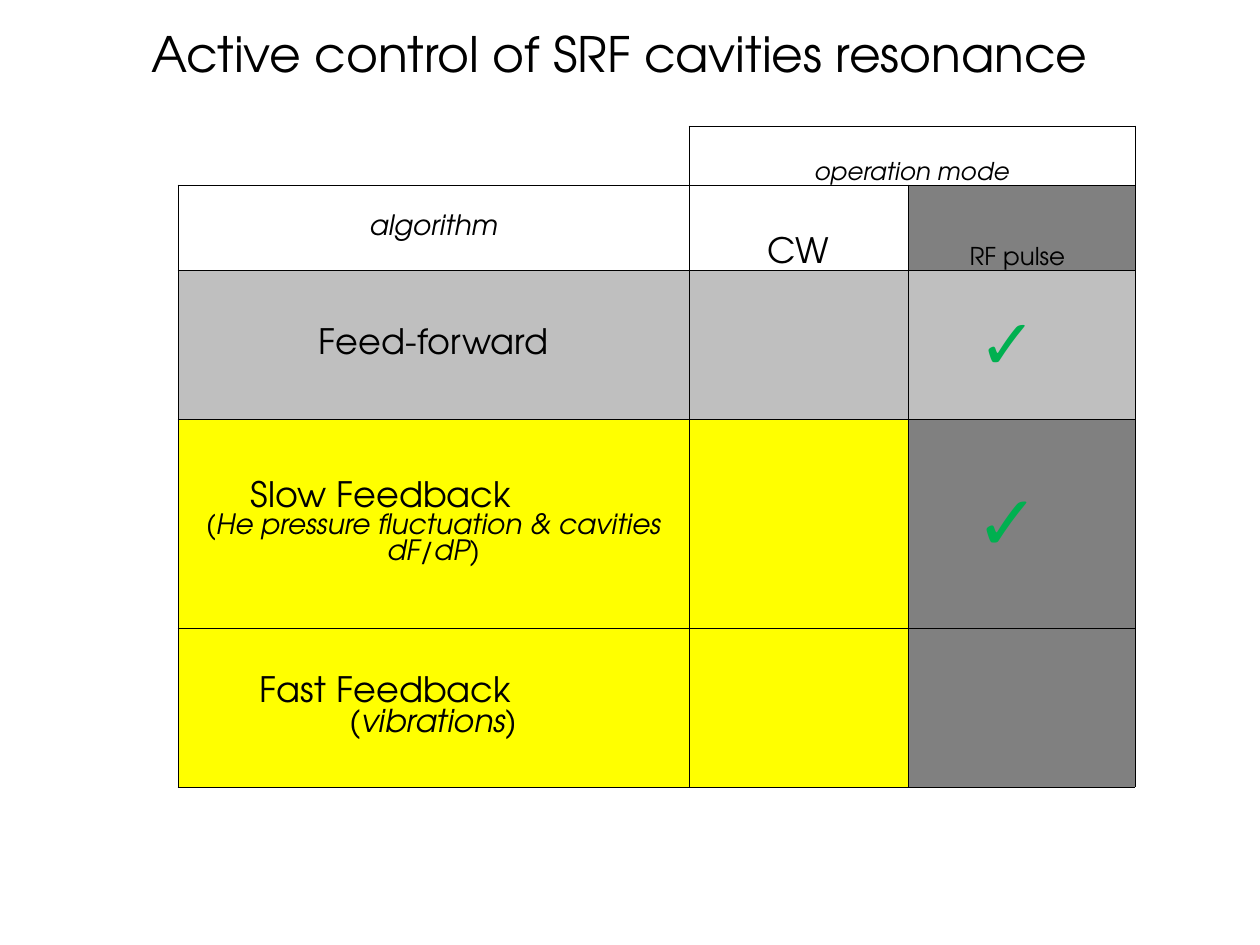
from dataclasses import dataclass

from lxml import etree
from pptx import Presentation
from pptx.dml.color import RGBColor
from pptx.enum.text import MSO_ANCHOR, MSO_AUTO_SIZE, PP_ALIGN
from pptx.oxml.ns import qn
from pptx.util import Pt

BLACK = RGBColor(0x00, 0x00, 0x00)
DARK_GRAY = RGBColor(0x80, 0x80, 0x80)
LIGHT_GRAY = RGBColor(0xBF, 0xBF, 0xBF)
YELLOW = RGBColor(0xFF, 0xFF, 0x00)
GREEN = RGBColor(0x00, 0xB0, 0x50)

MIDDLE = MSO_ANCHOR.MIDDLE
BOTTOM = MSO_ANCHOR.BOTTOM
CENTER = PP_ALIGN.CENTER
LEFT = PP_ALIGN.LEFT
NO_AUTOFIT = MSO_AUTO_SIZE.NONE

FONT = "TeX Gyre Adventor"
CHECK_FONT = "DejaVu Sans"
NO_STYLE = "{2D5ABB26-0587-4C30-8999-92F81FD0307C}"
TITLE_ONLY = 5
ALL_SIDES = "LRTB"

TABLE_LEFT, TABLE_TOP = 178, 126
COLUMN_WIDTHS = (511, 219, 227)
ROW_HEIGHTS = (59, 85, 149, 209, 159)


@dataclass(frozen=True)
class Line:
    text: str
    size: float
    italic: bool = False
    indent: int = 0
    color: RGBColor = BLACK
    font: str = FONT


@dataclass(frozen=True)
class Entry:
    lines: tuple[Line, ...] = ()
    fill: RGBColor | None = None
    anchor: MSO_ANCHOR = MIDDLE
    sides: str = ALL_SIDES
    right_margin: int = 1


def px(length: int) -> int:
    return round(length * 914400 / 126)


def apply_format(target, formats: dict) -> None:
    for name, value in formats.items():
        setattr(target, name, value)


def check(size: int, fill: RGBColor) -> Entry:
    mark = Line("✓", size, color=GREEN, font=CHECK_FONT)
    return Entry((mark,), fill, right_margin=29)


def write_line(paragraph, line: Line) -> None:
    apply_format(paragraph, {
        "alignment": LEFT if line.indent else CENTER,
        "line_spacing": 1.0,
    })
    if line.indent:
        paragraph._p.get_or_add_pPr().set("marL", str(px(line.indent)))
    run = paragraph.add_run()
    run.text = line.text
    apply_format(run.font, {
        "name": line.font, "size": Pt(line.size), "italic": line.italic,
    })
    run.font.color.rgb = line.color


def write_lines(frame, lines: tuple[Line, ...]) -> None:
    for index, line in enumerate(lines):
        paragraph = frame.add_paragraph() if index else frame.paragraphs[0]
        write_line(paragraph, line)


def add_borders(cell, sides: str) -> None:
    properties = cell._tc.get_or_add_tcPr()
    for side in ALL_SIDES:
        border = etree.SubElement(properties, qn(f"a:ln{side}"), w=str(Pt(0.5)))
        if side in sides:
            paint = etree.SubElement(border, qn("a:solidFill"))
            etree.SubElement(paint, qn("a:srgbClr"), val=str(BLACK))
        else:
            etree.SubElement(border, qn("a:noFill"))


def fill_cell(cell, entry: Entry) -> None:
    apply_format(cell, {
        "margin_left": px(1), "margin_right": px(entry.right_margin),
        "margin_top": px(1), "margin_bottom": 0,
        "vertical_anchor": entry.anchor,
    })
    add_borders(cell, entry.sides)
    if entry.fill is None:
        cell.fill.background()
    else:
        cell.fill.solid()
        cell.fill.fore_color.rgb = entry.fill
    write_lines(cell.text_frame, entry.lines)


def add_title(slide, line: Line) -> None:
    title = slide.shapes.title
    apply_format(title, {
        "left": px(21), "top": px(32), "width": px(1197), "height": px(42),
    })
    apply_format(title.text_frame, {
        "margin_left": 0, "margin_right": 0, "margin_top": 0,
        "margin_bottom": 0, "vertical_anchor": MIDDLE,
        "word_wrap": True, "auto_size": NO_AUTOFIT,
    })
    write_lines(title.text_frame, (line,))


def add_mode_table(slide, rows: tuple[tuple[Entry, ...], ...]) -> None:
    frame = slide.shapes.add_table(
        len(ROW_HEIGHTS), len(COLUMN_WIDTHS), px(TABLE_LEFT), px(TABLE_TOP),
        px(sum(COLUMN_WIDTHS)), px(sum(ROW_HEIGHTS)),
    )
    table = frame.table
    apply_format(table, {"first_row": False, "horz_banding": False})
    table._tbl.tblPr.find(qn("a:tableStyleId")).text = NO_STYLE
    for column, width in zip(table.columns, COLUMN_WIDTHS):
        column.width = px(width)
    for row, height in zip(table.rows, ROW_HEIGHTS):
        row.height = px(height)
    table.cell(0, 1).merge(table.cell(0, 2))
    for row, entries in zip(table.rows, rows):
        for cell, entry in zip(row.cells, entries):
            fill_cell(cell, entry)


ROWS = (
    (
        Entry(sides="RB"),
        Entry((Line("operation mode", 14, True),), anchor=BOTTOM),
        Entry(),
    ),
    (
        Entry((Line("algorithm", 16, True),)),
        Entry((Line("CW", 20),), anchor=BOTTOM),
        Entry((Line("RF pulse", 14),), DARK_GRAY, BOTTOM, right_margin=9),
    ),
    (
        Entry((Line("Feed-forward", 20),), LIGHT_GRAY),
        Entry(fill=LIGHT_GRAY),
        check(40, LIGHT_GRAY),
    ),
    (
        Entry((
            Line("Slow Feedback", 20, indent=72),
            Line("(He pressure fluctuation & cavities dF/dP)", 16, True),
        ), YELLOW),
        Entry(fill=YELLOW),
        check(44, DARK_GRAY),
    ),
    (
        Entry((
            Line("Fast Feedback", 20, indent=81),
            Line("(vibrations)", 18, True),
        ), YELLOW),
        Entry(fill=YELLOW),
        Entry(fill=DARK_GRAY),
    ),
)


def main() -> None:
    deck = Presentation()
    apply_format(deck, {"slide_width": px(1260), "slide_height": px(945)})
    slide = deck.slides.add_slide(deck.slide_layouts[TITLE_ONLY])
    add_title(slide, Line("Active control of SRF cavities resonance", 27.9))
    add_mode_table(slide, ROWS)
    deck.save("out.pptx")


if __name__ == "__main__":
    main()
